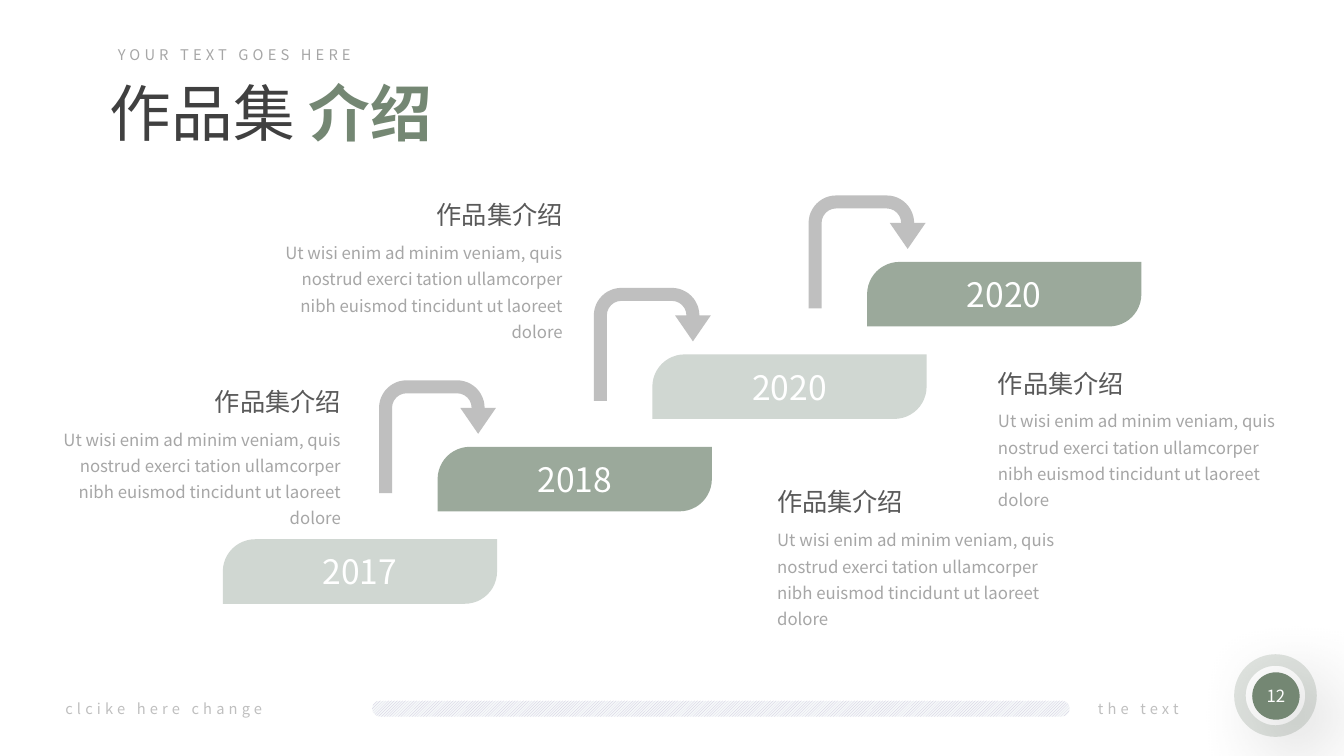
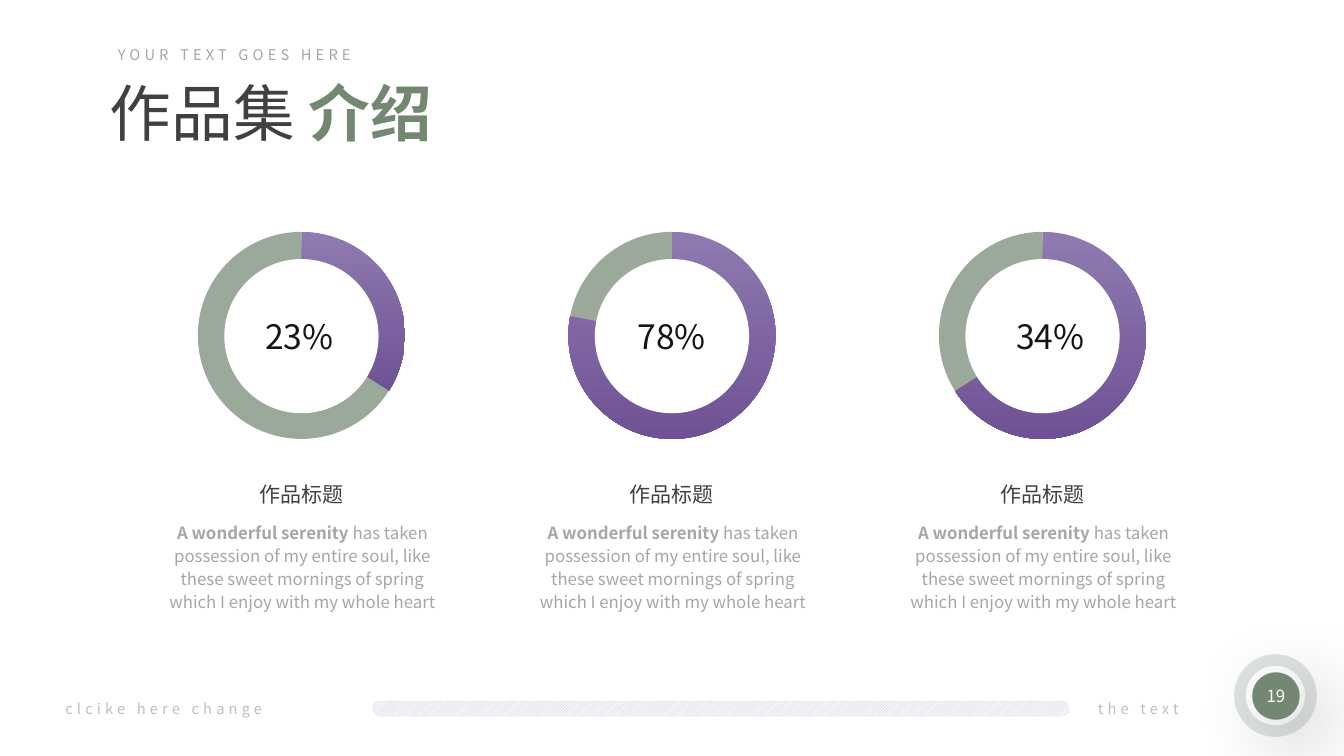
from lxml import etree
from pptx import Presentation
from pptx.chart.data import CategoryChartData
from pptx.dml.color import RGBColor
from pptx.enum.chart import XL_CHART_TYPE
from pptx.enum.dml import MSO_PATTERN
from pptx.enum.shapes import MSO_SHAPE
from pptx.enum.text import MSO_ANCHOR, MSO_AUTO_SIZE, PP_ALIGN
from pptx.oxml import parse_xml
from pptx.oxml.ns import nsdecls, qn
from pptx.util import Inches, Pt

FONT = "Noto Sans CJK SC"
GREEN, SAGE, MIST = "748773", "9BA99B", "D0D7D2"
WHITE, INK, DARK, SLATE = "FFFFFF", "151314", "404040", "595959"
GRAY, PALE = "A6A6A6", "BFBFBF"
LILAC, PURPLE = "8F7AB0", "6F5295"
LEFT, MID, RIGHT = PP_ALIGN.LEFT, PP_ALIGN.CENTER, PP_ALIGN.RIGHT

# Text looks: size, colour, letter spacing, line spacing, inset
LOOKS = {
    "title": dict(size=44, color=DARK),
    "kicker": dict(size=10.5, color=GRAY, track=3),
    "foot": dict(size=10.5, color=PALE, track=3),
    "page": dict(size=12, color=WHITE),
    "year": dict(size=24, color=WHITE),
    "head": dict(size=18, color=SLATE),
    "body": dict(size=12, color=GRAY, lead=1.3),
    "rate": dict(size=24, color=INK, inset=0.03),
    "name": dict(size=15, color=DARK, lead=1.1, inset=0.03),
    "note": dict(size=12, color=GRAY, lead=1.14, inset=0.03),
}

TITLE = [("作品集 ", {}), ("介绍", dict(color=GREEN, bold=True))]
FRAME = [
    ("YOUR TEXT GOES HERE", "kicker", (1.07, 0.41, 4.53, 0.29), LEFT),
    ("clcike here change", "foot", (0.55, 6.89, 2.3, 0.28), LEFT),
    ("the text", "foot", (10.66, 6.89, 1.13, 0.28), RIGHT),
]

YEARS = ["2017", "2018", "2020", "2020"]
HEAD = "作品集介绍"
BODY = ("Ut wisi enim ad minim veniam, quis nostrud exerci tation "
        "ullamcorper nibh euismod tincidunt ut laoreet dolore")
NOTES = [(7.61, 4.78, LEFT), (9.8, 3.6, LEFT),
         (2.54, 1.93, RIGHT), (0.34, 3.78, RIGHT)]

# Label, purple share, offset of the label from the ring's left edge
RINGS = [("23%", 34, 0.65), ("78%", 78, 0.67), ("34%", 66, 0.75)]
NAME = "作品标题"
STORY = [("A wonderful serenity ", dict(bold=True)),
         ("has taken possession of my entire soul, like these sweet mornings "
          "of spring which I enjoy with my whole heart", {})]


def rgb(code):
    return RGBColor.from_string(code)


def place(box):
    return [Inches(n) for n in box]


def write(frame, runs, look, align=LEFT, anchor=MSO_ANCHOR.TOP):
    """Fill a text frame with one paragraph of (text, changes) runs."""
    if isinstance(runs, str):
        runs = [(runs, {})]
    style = LOOKS[look]
    form = dict(word_wrap=True, auto_size=MSO_AUTO_SIZE.NONE,
                vertical_anchor=anchor)
    if "inset" in style:
        for side in ("left", "top", "right", "bottom"):
            form["margin_" + side] = Inches(style["inset"])
    for key, value in form.items():
        setattr(frame, key, value)
    para = frame.paragraphs[0]
    para.alignment = align
    if "lead" in style:
        para.line_spacing = style["lead"]
    for text, change in runs:
        mix = {**style, **change}
        run = para.add_run()
        run.text = text
        font = dict(name=FONT, size=Pt(mix["size"]),
                    bold=mix.get("bold", False))
        for key, value in font.items():
            setattr(run.font, key, value)
        run.font.color.rgb = rgb(mix["color"])
        props = run.font._element
        if "track" in mix:
            props.set("spc", str(mix["track"] * 100))
        etree.SubElement(props, qn("a:ea")).set("typeface", FONT)


def label(slide, box, runs, look, align=LEFT):
    write(slide.shapes.add_textbox(*place(box)).text_frame, runs, look, align)


def draw(slide, kind, box, fill=None, adjust=()):
    shape = slide.shapes.add_shape(kind, *place(box))
    shape.shadow.inherit = False
    shape.line.fill.background()
    if fill:
        shape.fill.solid()
        shape.fill.fore_color.rgb = rgb(fill)
    for i, value in enumerate(adjust):
        shape.adjustments[i] = value
    return shape


def badge(slide, page):
    ring = draw(slide, MSO_SHAPE.DONUT, (12.24, 6.49, 0.82, 0.82), GREEN,
                [0.14])
    tint = ring._element.spPr.find(".//" + qn("a:srgbClr"))
    etree.SubElement(tint, qn("a:alpha")).set("val", "22000")
    disc = draw(slide, MSO_SHAPE.OVAL, (12.42, 6.67, 0.47, 0.47), GREEN)
    glow = disc._element.spPr.find(qn("a:effectLst"))
    glow.append(parse_xml(
        f'<a:outerShdw {nsdecls("a")} blurRad="{Pt(59)}" dist="{Pt(21)}" '
        'dir="2700000" algn="tl" rotWithShape="0"><a:srgbClr val="000000">'
        '<a:alpha val="40000"/></a:srgbClr></a:outerShdw>'))
    label(slide, (12.32, 6.75, 0.67, 0.3), page, "page", MID)


def start(deck, page):
    """Add a slide with the shared title, footer and page badge."""
    slide = deck.slides.add_slide(deck.slide_layouts[5])
    title = slide.shapes.title
    spots = zip(("left", "top", "width", "height"),
                place((0.99, 0.69, 5.17, 0.84)))
    for key, value in spots:
        setattr(title, key, value)
    write(title.text_frame, TITLE, "title")
    badge(slide, page)
    band = draw(slide, MSO_SHAPE.ROUNDED_RECTANGLE, (3.69, 6.95, 6.92, 0.16),
                adjust=[0.5])
    band.fill.patterned()
    band.fill.pattern = MSO_PATTERN.LIGHT_UPWARD_DIAGONAL
    band.fill.fore_color.rgb = rgb("CCC3DB")
    band.fill.back_color.rgb = rgb("F5F8F9")
    for text, look, box, align in FRAME:
        label(slide, box, text, look, align)
    return slide


def steps(deck):
    slide = start(deck, "12")
    for i, year in enumerate(YEARS):
        x, y = 2.21 + 2.13 * i, 5.35 - 0.917 * i
        if i:
            draw(slide, MSO_SHAPE.U_TURN_ARROW,
                 (x - 0.58, y - 0.66, 1.16, 1.12), PALE,
                 [0.115, 0.158, 0.23, 0.244, 0.474])
        bar = draw(slide, MSO_SHAPE.ROUND_2_DIAG_RECTANGLE,
                   (x, y, 2.72, 0.64), (MIST, SAGE)[i % 2], [0.5, 0])
        write(bar.text_frame, year, "year", MID, MSO_ANCHOR.MIDDLE)
    for x, y, align in NOTES:
        label(slide, (x, y, 3.14, 0.4), HEAD, "head", align)
        label(slide, (x, y + 0.37, 3.14, 1.15), BODY, "body", align)


def pie(slide, box, share):
    data = CategoryChartData()
    data.categories = ["1", "2"]
    data.add_series("Series 1", [share, 100 - share])
    chart = slide.shapes.add_chart(XL_CHART_TYPE.PIE, *place(box), data).chart
    for key in ("has_title", "has_legend"):
        setattr(chart, key, False)
    for key, value in dict(name=FONT, size=Pt(10)).items():
        setattr(chart.font, key, value)
    chart.font.color.rgb = rgb("000000")
    plot = chart.plots[0]
    plot.vary_by_categories = False
    first, rest = [plot.series[0].points[i].format for i in range(2)]
    first.fill.gradient()
    first.fill.gradient_angle = 270
    for stop, code, spot in zip(first.fill.gradient_stops, (LILAC, PURPLE),
                                (0, 1)):
        stop.color.rgb = rgb(code)
        stop.position = spot
    rest.fill.solid()
    rest.fill.fore_color.rgb = rgb(SAGE)
    for part in (first, rest):
        part.line.fill.background()
    area = chart._chartSpace.find(".//" + qn("c:plotArea"))
    for old in area.findall(qn("c:layout")):
        area.remove(old)
    sizes = dict(layoutTarget="inner", xMode="edge", yMode="edge",
                 x=0.005, y=0.005, w=0.99, h=0.988)
    inner = "".join(f'<c:{key} val="{val}"/>' for key, val in sizes.items())
    area.insert(0, parse_xml(
        f'<c:layout {nsdecls("c")}><c:manualLayout>{inner}'
        '</c:manualLayout></c:layout>'))


def rings(deck):
    slide = start(deck, "19")
    for i, (rate, share, shift) in enumerate(RINGS):
        x = 1.95 + 3.675 * i
        pie(slide, (x, 2.29, 2.08, 2.08), share)
        draw(slide, MSO_SHAPE.OVAL, (x + 0.275, 2.57, 1.53, 1.53), WHITE)
        label(slide, (x + shift, 3.1, 1.76, 0.52), rate, "rate")
        label(slide, (x - 0.34, 4.72, 2.76, 0.31), NAME, "name", MID)
        label(slide, (x - 0.34, 5.13, 2.78, 0.97), STORY, "note", MID)


def main():
    deck = Presentation()
    deck.slide_width, deck.slide_height = Inches(13.33), Inches(7.5)
    steps(deck)
    rings(deck)
    deck.save("out.pptx")


if __name__ == "__main__":
    main()
